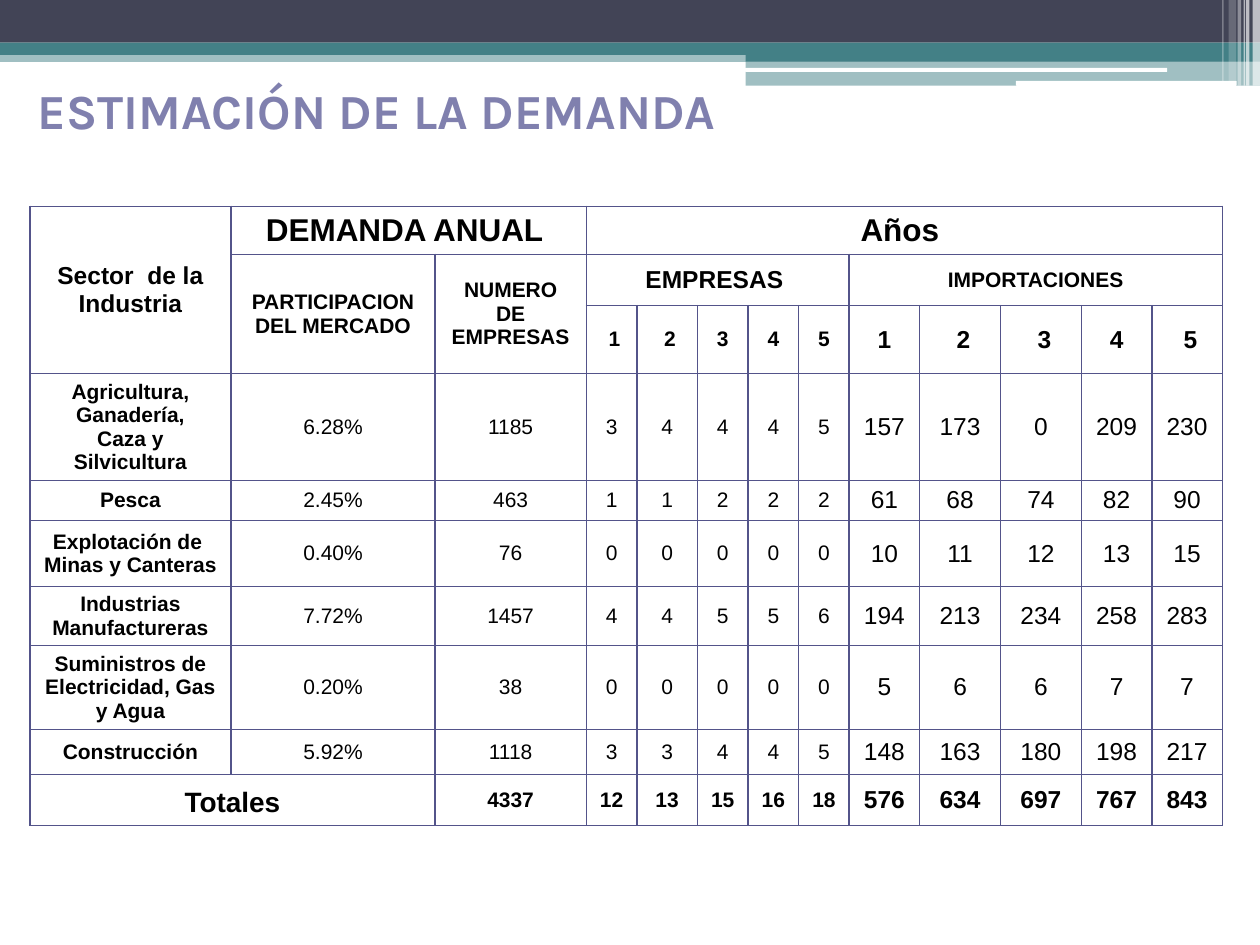
from lxml import etree
from pptx import Presentation
from pptx.dml.color import RGBColor
from pptx.enum.shapes import MSO_SHAPE
from pptx.enum.text import MSO_ANCHOR, PP_ALIGN
from pptx.oxml.ns import qn
from pptx.util import Cm, Pt

RECT, ROUND = MSO_SHAPE.RECTANGLE, MSO_SHAPE.ROUNDED_RECTANGLE
MIDDLE, BOTTOM = MSO_ANCHOR.MIDDLE, MSO_ANCHOR.BOTTOM
CENTER = PP_ALIGN.CENTER

COLORS = {
    "dark": "424456", "teal": "438086", "white": "FFFFFF",
    "title": "8080AE", "border": "53548A", "text": "000000",
}

BANDS = [
    (RECT, 0, 1.02, 25.4, 0.23, "teal", 50),
    (RECT, 0, 0, 25.4, 0.86, "dark", 100),
    (RECT, 0, 0.86, 25.4, 0.25, "teal", 100),
    (RECT, 15.03, 0.99, 10.37, 0.25, "teal", 100),
    (RECT, 15.03, 1.23, 10.37, 0.5, "teal", 50),
    (ROUND, 15.02, 1.37, 8.51, 0.08, "white", 100),
    (ROUND, 20.48, 1.63, 4.45, 0.1, "white", 100),
]
STRIPES = [
    (25.25, 0.15, 1.73, 65), (25.12, 0.07, 1.73, 65), (25.07, 0.03, 1.73, 60),
    (24.95, 0.07, 1.73, 40), (24.77, 0.15, 1.63, 20), (24.64, 0.03, 1.63, 30),
]

COL_WIDTHS = [4.06, 4.11, 3.05, 1.02, 1.22, 1.02, 1.02, 1.02,
              1.42, 1.63, 1.63, 1.42, 1.42]
ROW_HEIGHTS = [0.97, 1.03, 1.37, 2.14, 0.81, 1.33, 1.19, 1.69, 0.91, 1.03]
FIRST_IMPORT_COL = 8

HEADERS = [
    (0, 0, 3, 1, "Sector  de la Industria", 14),
    (0, 1, 1, 2, "DEMANDA ANUAL ", 18),
    (0, 3, 1, 10, "Años ", 18),
    (1, 1, 2, 1, "PARTICIPACION DEL MERCADO", 12),
    (1, 2, 2, 1, "NUMERO DE EMPRESAS", 12),
    (1, 3, 1, 5, "EMPRESAS ", 14),
    (1, 8, 1, 5, " IMPORTACIONES ", 12),
]
YEARS = [" 1", " 2", "3", "4", "5", "1", " 2", " 3", "4", " 5"]
SECTORS = [
    ("Agricultura,\nGanadería,\nCaza y Silvicultura", "6.28%", 1185,
     3, 4, 4, 4, 5, 157, 173, 0, 209, 230),
    ("Pesca", "2.45%", 463, 1, 1, 2, 2, 2, 61, 68, 74, 82, 90),
    ("Explotación de \nMinas y Canteras", "0.40%", 76,
     0, 0, 0, 0, 0, 10, 11, 12, 13, 15),
    ("Industrias Manufactureras", "7.72%", 1457,
     4, 4, 5, 5, 6, 194, 213, 234, 258, 283),
    ("Suministros de Electricidad, Gas y Agua", "0.20%", 38,
     0, 0, 0, 0, 0, 5, 6, 6, 7, 7),
    ("Construcción", "5.92%", 1118, 3, 3, 4, 4, 5, 148, 163, 180, 198, 217),
]
TOTALS = [4337, 12, 13, 15, 16, 18, 576, 634, 697, 767, 843]


def rgb(name):
    """Return the named colour."""
    return RGBColor.from_string(COLORS[name])


def add_band(s, kind, x, y, w, h, color, opacity):
    """Draw a flat shape without outline, opacity in percent."""
    sp = s.shapes.add_shape(kind, Cm(x), Cm(y), Cm(w), Cm(h))
    sp.shadow.inherit = False
    sp.line.fill.background()
    sp.fill.solid()
    sp.fill.fore_color.rgb = rgb(color)
    if opacity < 100:
        clr = sp.fill._xPr.find(qn("a:solidFill"))[0]
        etree.SubElement(clr, qn("a:alpha"), val=str(opacity * 1000))


def add_run(p, text, font, size, color, bold):
    """Append one formatted run to a paragraph."""
    r = p.add_run()
    r.text = text
    r.font.name = font
    r.font.size = Pt(size)
    r.font.bold = bold
    r.font.color.rgb = rgb(color)


def add_title(s, text):
    """Place the slide title."""
    tf = s.shapes.add_textbox(0, 0, Cm(20.12), Cm(3.78)).text_frame
    tf.word_wrap = True
    tf.vertical_anchor = BOTTOM
    tf.margin_left, tf.margin_bottom = Cm(0.76), Cm(0.97)
    add_run(tf.paragraphs[0], text, "Karla", 28, "title", True)


def style_cell(cell):
    """Clear the fill, tighten the margins and draw thin borders."""
    cell.fill.background()
    cell.margin_top = cell.margin_bottom = Cm(0.06)
    tc_pr = cell._tc.get_or_add_tcPr()
    for i, side in enumerate("LRTB"):
        ln = etree.Element(qn(f"a:ln{side}"), w=str(Pt(1)))
        fill = etree.SubElement(ln, qn("a:solidFill"))
        etree.SubElement(fill, qn("a:srgbClr"), val=COLORS["border"])
        tc_pr.insert(i, ln)


def write_cell(cell, text, size, bold=True, anchor=MIDDLE):
    """Write centred text, one paragraph per line."""
    cell.vertical_anchor = anchor
    tf = cell.text_frame
    for i, line in enumerate(str(text).split("\n")):
        p = tf.add_paragraph() if i else tf.paragraphs[0]
        p.alignment = CENTER
        add_run(p, line, "Arial", size, "text", bold)


def write_row(table, row, first_col, values, bold):
    """Write values from first_col on, imports in the larger size."""
    for col, value in enumerate(values, first_col):
        size = 14 if col >= FIRST_IMPORT_COL else 12
        write_cell(table.cell(row, col), value, size, bold or col == 0)


def add_demand_table(s):
    """Build the demand table with its merged headings."""
    frame = s.shapes.add_table(len(ROW_HEIGHTS), len(COL_WIDTHS), Cm(0.6),
                               Cm(4.16), Cm(sum(COL_WIDTHS)), Cm(sum(ROW_HEIGHTS)))
    table = frame.table
    table.first_row = table.horz_banding = False
    for column, width in zip(table.columns, COL_WIDTHS):
        column.width = Cm(width)
    for row, height in zip(table.rows, ROW_HEIGHTS):
        row.height = Cm(height)
    for cell in table.iter_cells():
        style_cell(cell)
    for row, col, down, across, text, size in HEADERS:
        cell = table.cell(row, col)
        cell.merge(table.cell(row + down - 1, col + across - 1))
        write_cell(cell, text, size)
    write_row(table, 2, 3, YEARS, True)
    for row, values in enumerate(SECTORS, 3):
        write_row(table, row, 0, values, False)
    total = table.cell(9, 0)
    total.merge(table.cell(9, 1))
    total.margin_bottom = Cm(0.14)
    write_cell(total, "Totales", 16, anchor=BOTTOM)
    write_row(table, 9, 2, TOTALS, True)


def main():
    """Create the slide and save it."""
    prs = Presentation()
    prs.slide_width, prs.slide_height = Cm(25.4), Cm(19.05)
    s = prs.slides.add_slide(prs.slide_layouts[6])
    for band in BANDS:
        add_band(s, *band)
    for x, w, h, opacity in STRIPES:
        add_band(s, RECT, x, 0, w, h, "white", opacity)
    add_title(s, "ESTIMACIÓN DE LA DEMANDA")
    add_demand_table(s)
    prs.save("out.pptx")


if __name__ == "__main__":
    main()
